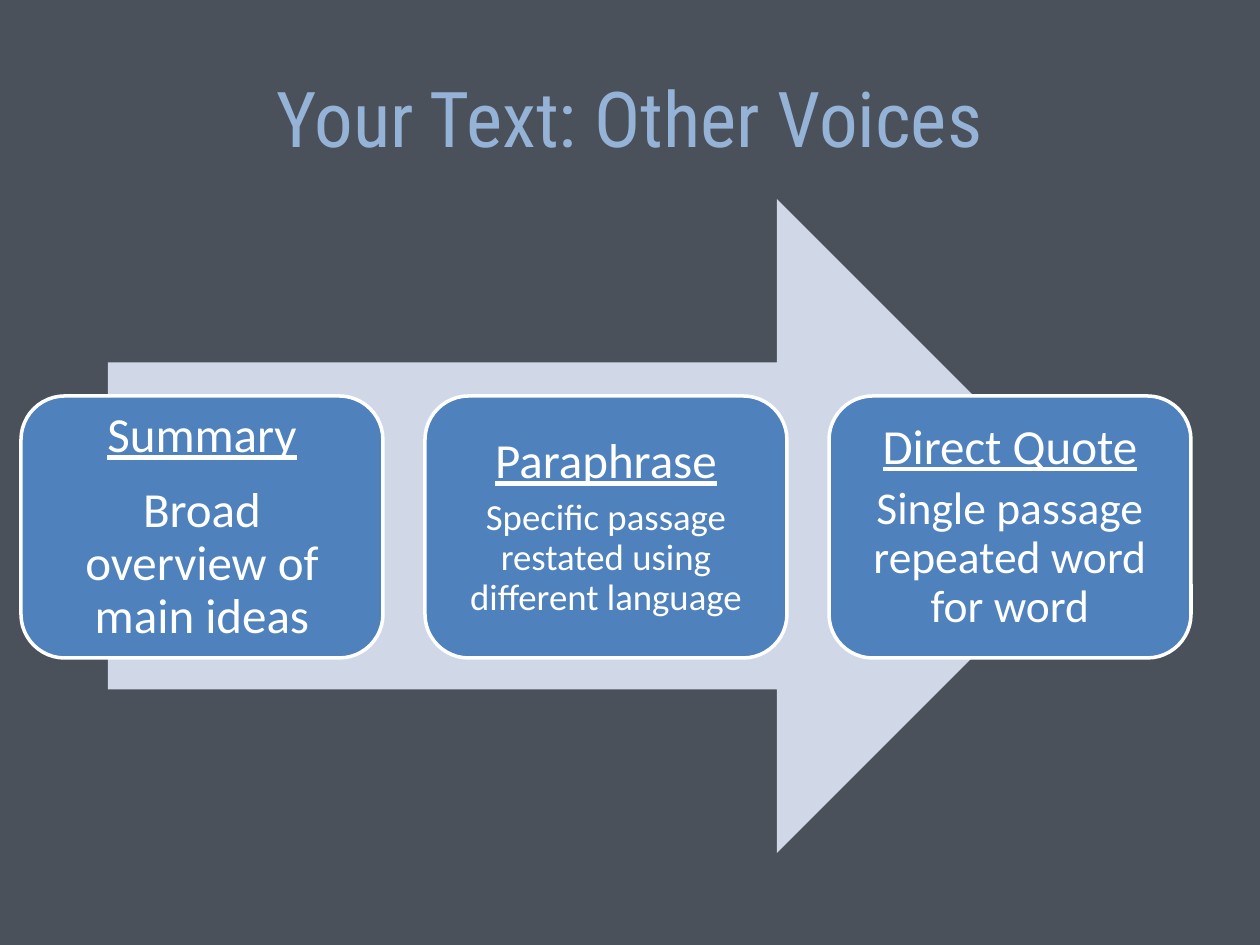
from typing import NamedTuple

from pptx import Presentation
from pptx.dml.color import RGBColor
from pptx.enum.shapes import MSO_SHAPE as Preset
from pptx.enum.text import MSO_ANCHOR as Anchor, PP_ALIGN as Align
from pptx.util import Pt

EMU_PER_PX = 914400 / 126
TITLE_ONLY = 5
BODY_FONT = "Calibri"
WHITE = "FFFFFF"


class Voice(NamedTuple):
    heading: str
    description: str
    size: int
    gap: float


VOICES = [
    Voice("Summary", "Broad overview of main ideas", 28, 12.4),
    Voice("Paraphrase", "Specific passage restated using different language", 21, 5.8),
    Voice("Direct Quote", "Single passage repeated word for word", 26, 5.8),
]
CARD_LEFT, CARD_TOP, CARD_WIDTH, CARD_HEIGHT = 21, 396, 362, 262
CARD_PITCH = 404
CARD_INSET = 28


def px(length: int) -> int:
    return round(length * EMU_PER_PX)


def rgb(value: str) -> RGBColor:
    return RGBColor.from_string(value)


def write(paragraph, text: str, *, size: int, font: str = BODY_FONT,
          color: str = WHITE, underline: bool = False,
          line_spacing: float = 1.0, space_after: float = 0) -> None:
    paragraph.alignment = Align.CENTER
    paragraph.line_spacing = line_spacing
    paragraph.space_after = Pt(space_after)
    run = paragraph.add_run()
    run.text = text
    run.font.name = font
    run.font.size = Pt(size)
    run.font.underline = underline
    run.font.color.rgb = rgb(color)


def add_filled(slide, preset: Preset, left: int, top: int, width: int,
               height: int, fill: str):
    shape = slide.shapes.add_shape(preset, px(left), px(top), px(width), px(height))
    shape.shadow.inherit = False
    shape.fill.solid()
    shape.fill.fore_color.rgb = rgb(fill)
    shape.line.fill.background()
    return shape


def add_card(slide, voice: Voice, left: int) -> None:
    card = add_filled(slide, Preset.ROUNDED_RECTANGLE, left, CARD_TOP,
                      CARD_WIDTH, CARD_HEIGHT, "4F81BD")
    card.line.color.rgb = rgb(WHITE)
    card.line.width = Pt(2)
    frame = card.text_frame
    frame.word_wrap = True
    frame.vertical_anchor = Anchor.MIDDLE
    frame.margin_left = frame.margin_right = px(CARD_INSET)
    frame.margin_top = frame.margin_bottom = px(CARD_INSET)
    write(frame.paragraphs[0], voice.heading, size=28, underline=True,
          line_spacing=0.9, space_after=voice.gap)
    write(frame.add_paragraph(), voice.description, size=voice.size, line_spacing=0.9)


def add_title(slide, text: str) -> None:
    title = slide.shapes.title
    title.left, title.top, title.width, title.height = map(px, (63, 38, 1134, 158))
    title.text_frame.vertical_anchor = Anchor.MIDDLE
    write(title.text_frame.paragraphs[0], text, size=44,
          font="Roboto Condensed", color="95B3D7")


def main() -> None:
    deck = Presentation()
    deck.slide_width, deck.slide_height = px(1260), px(945)
    slide = deck.slides.add_slide(deck.slide_layouts[TITLE_ONLY])
    slide.background.fill.solid()
    slide.background.fill.fore_color.rgb = rgb("4B515B")

    add_title(slide, "Your Text: Other Voices")
    add_filled(slide, Preset.RIGHT_ARROW, 108, 199, 996, 654, "D0D8E8")
    for index, voice in enumerate(VOICES):
        add_card(slide, voice, CARD_LEFT + index * CARD_PITCH)
    deck.save("out.pptx")


if __name__ == "__main__":
    main()
